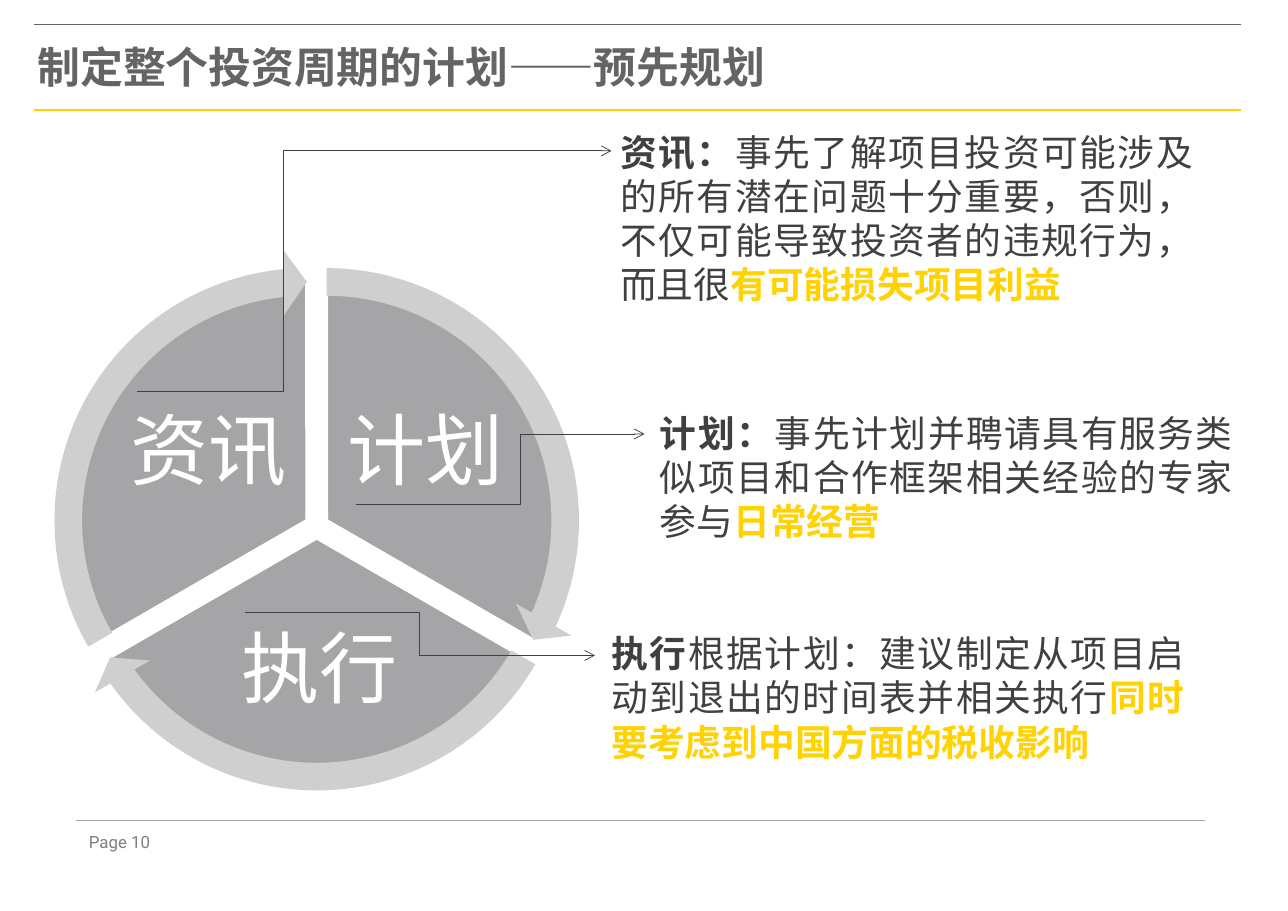
from dataclasses import dataclass

import lxml.etree
import pptx
import pptx.dml.color
import pptx.enum.shapes
import pptx.enum.text
import pptx.oxml
import pptx.oxml.ns
import pptx.util

PX = 9144  # EMU per px, 100 px to the inch
CJK = "Noto Sans CJK SC"
YELLOW, DARK, GREY, PALE, WHITE = "FFD200", "404040", "A5A4A7", "CFCFD0", "FFFFFF"
TITLE_GREY, LEADER, PAGE_GREY = "646464", "3F3F41", "7F7E82"
SHAPE = pptx.enum.shapes.MSO_SHAPE
CONNECTOR = pptx.enum.shapes.MSO_CONNECTOR
ALIGN = pptx.enum.text.PP_ALIGN
ANCHOR = pptx.enum.text.MSO_ANCHOR
Box = tuple[int, int, int, int]


@dataclass(frozen=True)
class Phase:
    """One third of the cycle, with its ring arrow and label."""
    label: str
    label_box: Box
    pie_at: tuple[int, int]
    pie_angles: tuple[float, float]
    arrow_at: tuple[int, int]
    arrow_angles: tuple[float, float]


@dataclass(frozen=True)
class Note:
    """Explanation of a phase, with the leader that points to it."""
    box: Box
    lead: str
    body: str
    highlight: str
    start: tuple[int, int]
    end: tuple[int, int]
    bend: float


@dataclass(frozen=True)
class Rule:
    start: tuple[int, int]
    end: tuple[int, int]
    color: str
    width: float


PIE_SIZE, ARROW_SIZE = 437, 491
# Angles are in units of 100000/60000 degree, as the preset shapes count them.
PHASES = (
    Phase("计划", (308, 347, 156, 130), (78, 254), (162, 18), (51, 227), (14.73, 161.99)),
    Phase("执行", (173, 553, 234, 114), (69, 270), (18, 90), (42, 243), (86.72, 18)),
    Phase("资讯", (111, 347, 156, 130), (60, 254), (90, 162), (33, 227), (158.73, 90)),
)
NOTES = (
    Note((563, 118, 520, 168), "资讯：",
         "事先了解项目投资可能涉及的所有潜在问题十分重要，否则，不仅可能导致投资者的违规行为，而且很",
         "有可能损失项目利益", (124, 355), (555, 137), 0.31),
    Note((599, 373, 520, 129), "计划：",
         "事先计划并聘请具有服务类似项目和合作框架相关经验的专家参与",
         "日常经营", (323, 458), (585, 394), 0.57),
    Note((555, 573, 520, 135), "执行",
         "根据计划：建议制定从项目启动到退出的时间表并相关执行",
         "同时要考虑到中国方面的税收影响", (222, 556), (540, 595), 0.5),
)
RULES = (
    Rule((31, 100), (1126, 100), YELLOW, 1),
    Rule((31, 22), (1126, 22), TITLE_GREY, 0.5),
    Rule((1094, 745), (69, 745), GREY, 0.75),
)


def rgb(color: str) -> pptx.dml.color.RGBColor:
    return pptx.dml.color.RGBColor.from_string(color)


def emu(lengths: tuple[int, ...]) -> list[int]:
    return [length * PX for length in lengths]


def add_child(parent, tag: str, **attributes: str):
    return lxml.etree.SubElement(parent, pptx.oxml.ns.qn(tag), **attributes)


def set_font(paragraph, size: float, color: str, name: str = CJK) -> None:
    font = paragraph.font
    font.size = pptx.util.Pt(size)
    font.color.rgb = rgb(color)
    font.name = name
    add_child(paragraph._p.pPr.find(pptx.oxml.ns.qn("a:defRPr")), "a:ea", typeface=name)


def set_frame(frame, margins: Box = (0, 0, 0, 0), anchor=ANCHOR.TOP) -> None:
    frame.word_wrap = True
    frame.auto_size = pptx.enum.text.MSO_AUTO_SIZE.NONE
    frame.vertical_anchor = anchor
    (frame.margin_left, frame.margin_top,
     frame.margin_right, frame.margin_bottom) = emu(margins)


def add_title(slide, text: str) -> None:
    title = slide.shapes.title
    title.left, title.top, title.width, title.height = emu((34, 40, 1102, 97))
    set_frame(title.text_frame, (0, 4, 0, 0))
    paragraph = title.text_frame.paragraphs[0]
    paragraph.text = text
    paragraph.alignment = ALIGN.LEFT
    paragraph.line_spacing = 0.85
    set_font(paragraph, 28, TITLE_GREY)
    paragraph.font.bold = True


def add_textbox(slide, box: Box, align, margin: int = 0, anchor=ANCHOR.TOP):
    """Add an empty text box and return its paragraph."""
    frame = slide.shapes.add_textbox(*emu(box)).text_frame
    set_frame(frame, (margin,) * 4, anchor)
    paragraph = frame.paragraphs[0]
    paragraph.alignment = align
    return paragraph


def add_line(slide, kind, start: tuple[int, int], end: tuple[int, int],
             color: str, width: float):
    line = slide.shapes.add_connector(kind, *emu(start + end))
    line.line.color.rgb = rgb(color)
    line.line.width = pptx.util.Pt(width)
    add_child(line._element.spPr, "a:effectLst")
    return line


def add_preset(slide, preset, at: tuple[int, int], size: int,
               adjustments: tuple[float, ...], fill: str):
    shape = slide.shapes.add_shape(preset, *emu(at + (size, size)))
    shape.shadow.inherit = False
    shape.fill.solid()
    shape.fill.fore_color.rgb = rgb(fill)
    for index, value in enumerate(adjustments):
        shape.adjustments[index] = value
    return shape


def add_sector(slide, phase: Phase) -> None:
    pie = add_preset(slide, SHAPE.PIE, phase.pie_at, PIE_SIZE, phase.pie_angles, GREY)
    pie.line.color.rgb = rgb(WHITE)
    pie.line.width = pptx.util.Pt(2)
    label = add_textbox(slide, phase.label_box, ALIGN.CENTER, 7, ANCHOR.MIDDLE)
    label.text = phase.label
    label.line_spacing = 0.9
    set_font(label, 51, WHITE)


def add_ring_arrow(slide, phase: Phase) -> None:
    adjustments = (0.051, 3.275, *phase.arrow_angles, 0.059)
    arrow = add_preset(slide, SHAPE.CIRCULAR_ARROW, phase.arrow_at, ARROW_SIZE,
                       adjustments, PALE)
    arrow.line.fill.background()


def add_note(slide, note: Note) -> None:
    paragraph = add_textbox(slide, note.box, ALIGN.JUSTIFY)
    paragraph.space_after = pptx.util.Pt(16)
    set_font(paragraph, 24, DARK)
    for text, bold, color in ((note.lead, True, DARK), (note.body, False, DARK),
                              (note.highlight, True, YELLOW)):
        run = paragraph.add_run()
        run.text = text
        run.font.bold = bold
        run.font.color.rgb = rgb(color)


def add_leader(slide, note: Note) -> None:
    leader = add_line(slide, CONNECTOR.ELBOW, note.start, note.end, LEADER, 0.5)
    guides = leader._element.spPr.prstGeom.get_or_add_avLst()
    add_child(guides, "a:gd", name="adj1", fmla=f"val {round(note.bend * 100000)}")
    add_child(leader.line._get_or_add_ln(), "a:tailEnd", type="arrow")


def main() -> None:
    deck = pptx.Presentation()
    deck.slide_width, deck.slide_height = emu((1169, 827))
    slide = deck.slides.add_slide(deck.slide_layouts[5])
    for rule in RULES:
        add_line(slide, CONNECTOR.STRAIGHT, rule.start, rule.end, rule.color, rule.width)
    page = add_textbox(slide, (69, 754, 79, 22), ALIGN.CENTER)
    page.text = "Page 10"
    page.line_spacing = pptx.util.Pt(14)
    set_font(page, 11, PAGE_GREY, "Roboto")
    add_title(slide, "制定整个投资周期的计划——预先规划")
    for phase in PHASES:
        add_sector(slide, phase)
    for phase in PHASES:
        add_ring_arrow(slide, phase)
    for note in NOTES:
        add_note(slide, note)
        add_leader(slide, note)
    deck.save("out.pptx")


if __name__ == "__main__":
    main()
